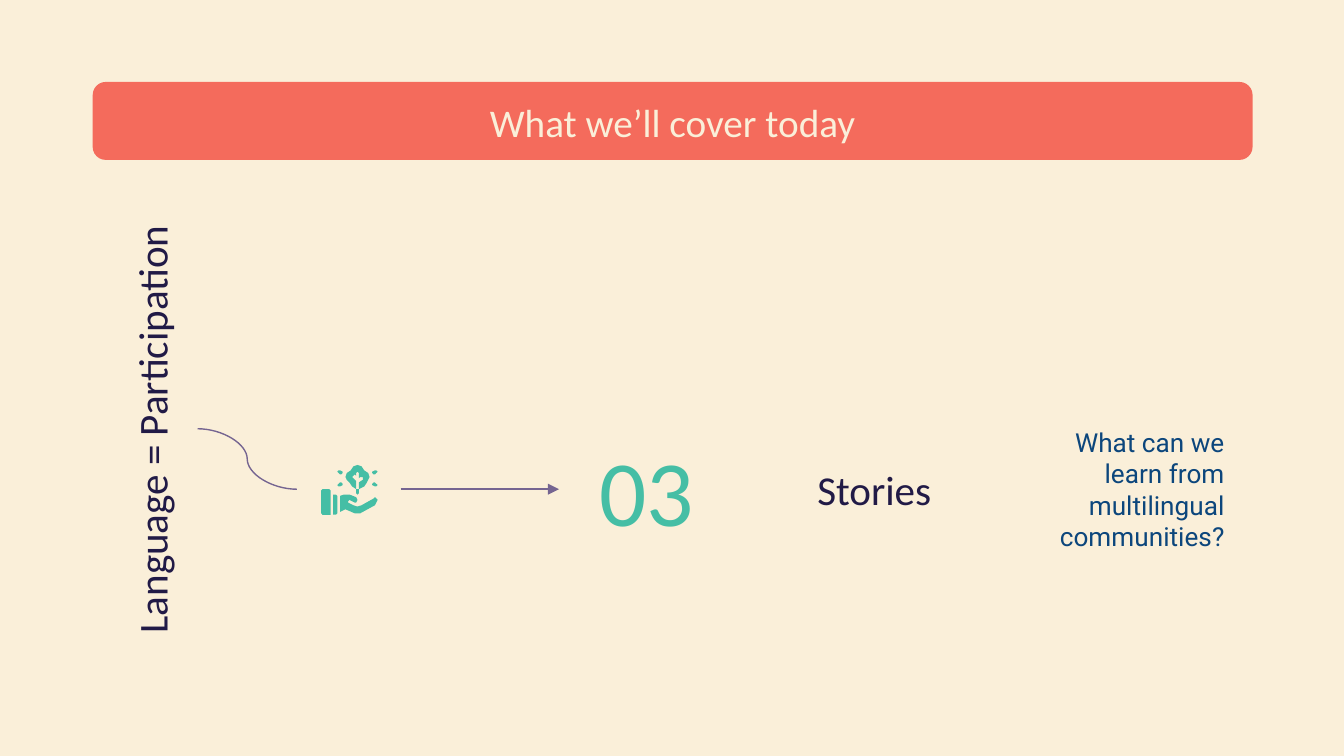
from lxml.etree import SubElement
from pptx import Presentation
from pptx.dml.color import RGBColor
from pptx.enum.shapes import MSO_CONNECTOR as Connector, MSO_SHAPE as Preset
from pptx.enum.text import MSO_ANCHOR as Anchor, MSO_AUTO_SIZE as AutoSize, PP_ALIGN as Align
from pptx.oxml.ns import qn
from pptx.util import Inches, Pt

CREAM, CORAL, NAVY = "FAEFD9", "F46B5C", "211A46"
TEAL, BLUE, PURPLE = "45BEA5", "0C467C", "756591"
ROW_TOP, ROW_HEIGHT = 3.34, 0.6
ROW_MIDDLE = ROW_TOP + ROW_HEIGHT / 2
TREE_X, TREE_Y = 2.66, 3.56

LEAF = [(0.13, -0.06), (0.11, -0.05), (0.11, -0.04), (0.12, -0.03), (0.13, -0.03),
        (0.14, -0.04), (0.15, -0.05), (0.14, -0.06)]
TRUNK = [(2.65, 3.64), (2.65, 3.67), (2.66, 3.68), (2.67, 3.67), (2.67, 3.64)]
CROWN = [(2.66, 3.46), (2.63, 3.47), (2.61, 3.5), (2.58, 3.52), (2.57, 3.55), (2.58, 3.57),
         (2.6, 3.59), (2.62, 3.62), (2.65, 3.64), (2.65, 3.58), (2.63, 3.56), (2.62, 3.55),
         (2.63, 3.54), (2.64, 3.53), (2.65, 3.54), (2.65, 3.52), (2.66, 3.51), (2.67, 3.52),
         (2.67, 3.56), (2.68, 3.55), (2.7, 3.55), (2.7, 3.57), (2.67, 3.59), (2.67, 3.64),
         (2.71, 3.62), (2.73, 3.59), (2.74, 3.57), (2.75, 3.55), (2.74, 3.52), (2.71, 3.5),
         (2.69, 3.47)]
CUFF = [(2.48, 3.68), (2.48, 3.83), (2.5, 3.83), (2.51, 3.82), (2.51, 3.69), (2.5, 3.68)]
SLEEVE = [(2.4, 3.64), (2.39, 3.65), (2.39, 3.82), (2.4, 3.83), (2.46, 3.83), (2.46, 3.65),
          (2.45, 3.64)]
HAND = [(2.58, 3.68), (2.56, 3.68), (2.53, 3.69), (2.53, 3.81), (2.57, 3.79), (2.64, 3.82),
        (2.66, 3.82), (2.68, 3.82), (2.79, 3.76), (2.81, 3.72), (2.79, 3.7), (2.78, 3.71),
        (2.69, 3.76), (2.66, 3.77), (2.63, 3.76), (2.59, 3.74), (2.59, 3.73), (2.6, 3.72),
        (2.64, 3.74), (2.65, 3.74), (2.66, 3.72), (2.65, 3.7), (2.6, 3.68)]


def color(value):
    """Turn a hex string into a colour."""
    return RGBColor.from_string(value)


def place(shape, left, top, width, height):
    """Move and size a shape in inches."""
    shape.left, shape.top = Inches(left), Inches(top)
    shape.width, shape.height = Inches(width), Inches(height)


def write(shape, text, size, ink, font="Calibri", align=Align.CENTER):
    """Fill a shape with one formatted paragraph."""
    frame = shape.text_frame
    frame.text = text
    frame.word_wrap = True
    frame.auto_size = AutoSize.NONE
    frame.vertical_anchor = Anchor.MIDDLE
    frame.margin_left = frame.margin_right = Inches(0.1)
    frame.margin_top = frame.margin_bottom = Inches(0.1)
    para = frame.paragraphs[0]
    para.alignment = align
    para.font.name = font
    para.font.size = Pt(size)
    para.font.color.rgb = color(ink)


def paint(shape, fill=None):
    """Give a shape a plain fill or none, without line or shadow."""
    shape.shadow.inherit = False
    shape.line.fill.background()
    if fill:
        shape.fill.solid()
        shape.fill.fore_color.rgb = color(fill)
    else:
        shape.fill.background()


def add_round_box(page, box, corner, fill=None):
    """Add a rounded rectangle."""
    shape = page.shapes.add_shape(Preset.ROUNDED_RECTANGLE, *map(Inches, box))
    shape.adjustments[0] = corner
    paint(shape, fill)
    return shape


def add_row_text(group, left, width, *style):
    """Add a text box to the agenda row."""
    box = group.shapes.add_textbox(*map(Inches, (left, ROW_TOP, width, ROW_HEIGHT)))
    write(box, *style)
    return box


def add_line(page, kind, start, end):
    """Add a thin connector without shadow."""
    line = page.shapes.add_connector(kind, *map(Inches, (*start, *end)))
    line.line.color.rgb = color(PURPLE)
    line.line.width = Pt(0.75)
    SubElement(line.element.spPr, qn("a:effectLst"))
    return line


def add_outline(group, points):
    """Add a closed teal outline."""
    start, *rest = [(Inches(x), Inches(y)) for x, y in points]
    builder = group.shapes.build_freeform(*start)
    builder.add_line_segments(rest, close=True)
    paint(builder.convert_to_shape(), TEAL)


def add_icon(page):
    """Draw a tree above an open hand, with four leaves around it."""
    icon = page.shapes.add_group_shape()
    for side in (1, -1):
        for level in (1, -1):
            add_outline(icon, [(TREE_X + side * x, TREE_Y + level * y) for x, y in LEAF])
    for outline in (TRUNK, CROWN, CUFF, SLEEVE, HAND):
        add_outline(icon, outline)


def add_title(page):
    """Put the title on its coral bar."""
    title = page.shapes.title
    place(title, 0.79, 0.59, 8.43, 0.63)
    write(title, "What we’ll cover today", 21, CREAM)
    bar = add_round_box(page, (0.69, 0.61, 8.63, 0.58), 0.167, CORAL)
    title.element.addprevious(bar.element)


def add_agenda(page):
    """Add the agenda row and the arrow leading to its number."""
    row = page.shapes.add_group_shape()
    add_row_text(row, 7.54, 1.67, "What can we learn from multilingual communities?",
                 14, BLUE, "Roboto", Align.RIGHT)
    add_row_text(row, 5.46, 2.09, "Stories", 22, NAVY)
    number = add_row_text(row, 4.16, 1.3, "03", 50, TEAL)
    arrow = add_line(page, Connector.STRAIGHT, (2.98, ROW_MIDDLE), (4.16, ROW_MIDDLE))
    arrow.end_connect(number, 1)
    SubElement(arrow.element.spPr.find(qn("a:ln")), qn("a:tailEnd"), type="triangle")


def main():
    """Build the agenda slide."""
    deck = Presentation()
    deck.slide_width = Inches(10)
    deck.slide_height = deck.slide_width * 9 // 16
    page = deck.slides.add_slide(deck.slide_layouts[5])
    page.background.fill.solid()
    page.background.fill.fore_color.rgb = color(CREAM)
    add_title(page)
    add_agenda(page)
    theme = add_round_box(page, (-0.6, 2.85, 3.45, 0.69), 0)
    theme.rotation = 270
    write(theme, "Language = Participation", 22, NAVY)
    add_icon(page)
    add_line(page, Connector.CURVE, (1.47, 3.19), (2.21, ROW_MIDDLE))
    deck.save("out.pptx")


if __name__ == "__main__":
    main()
